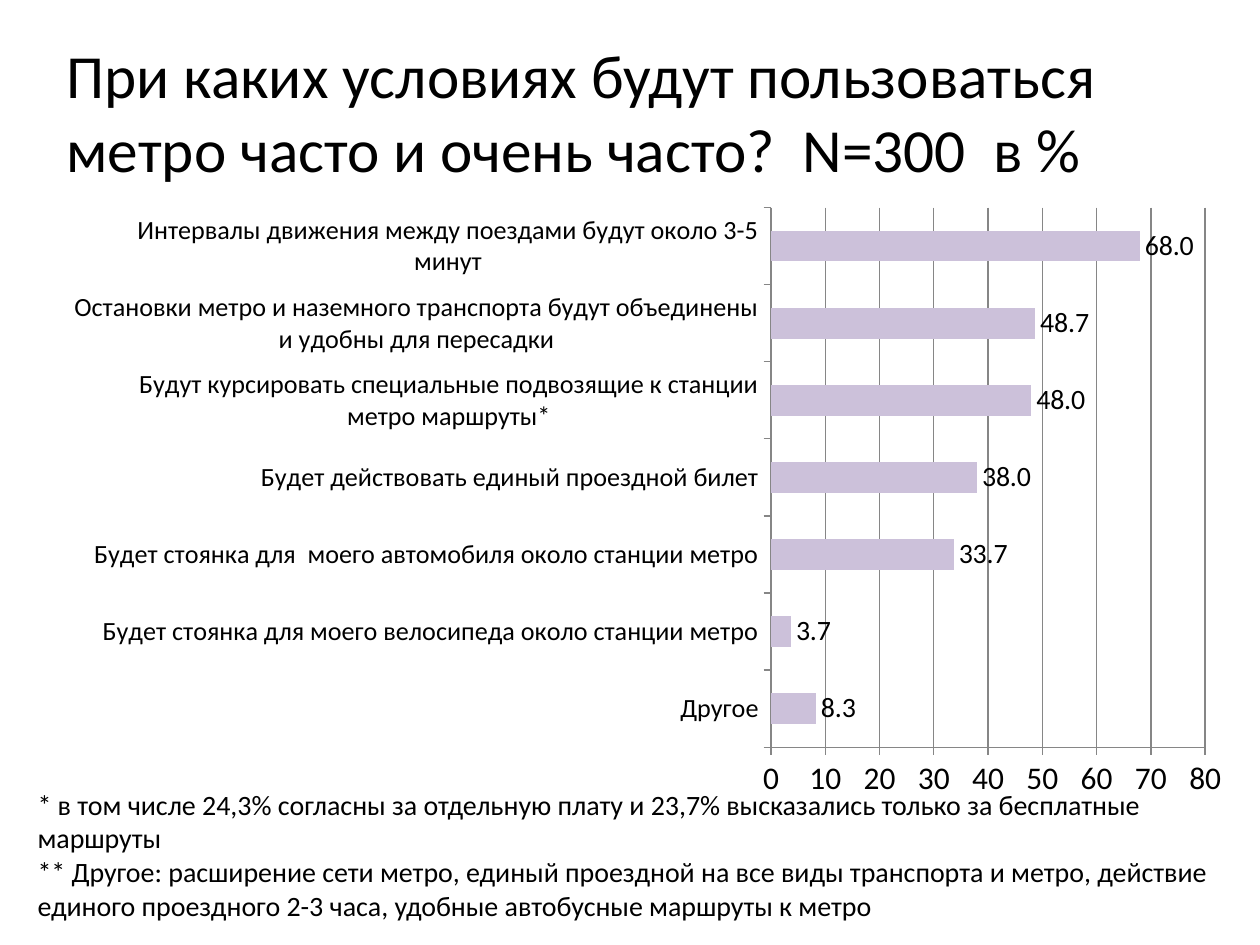
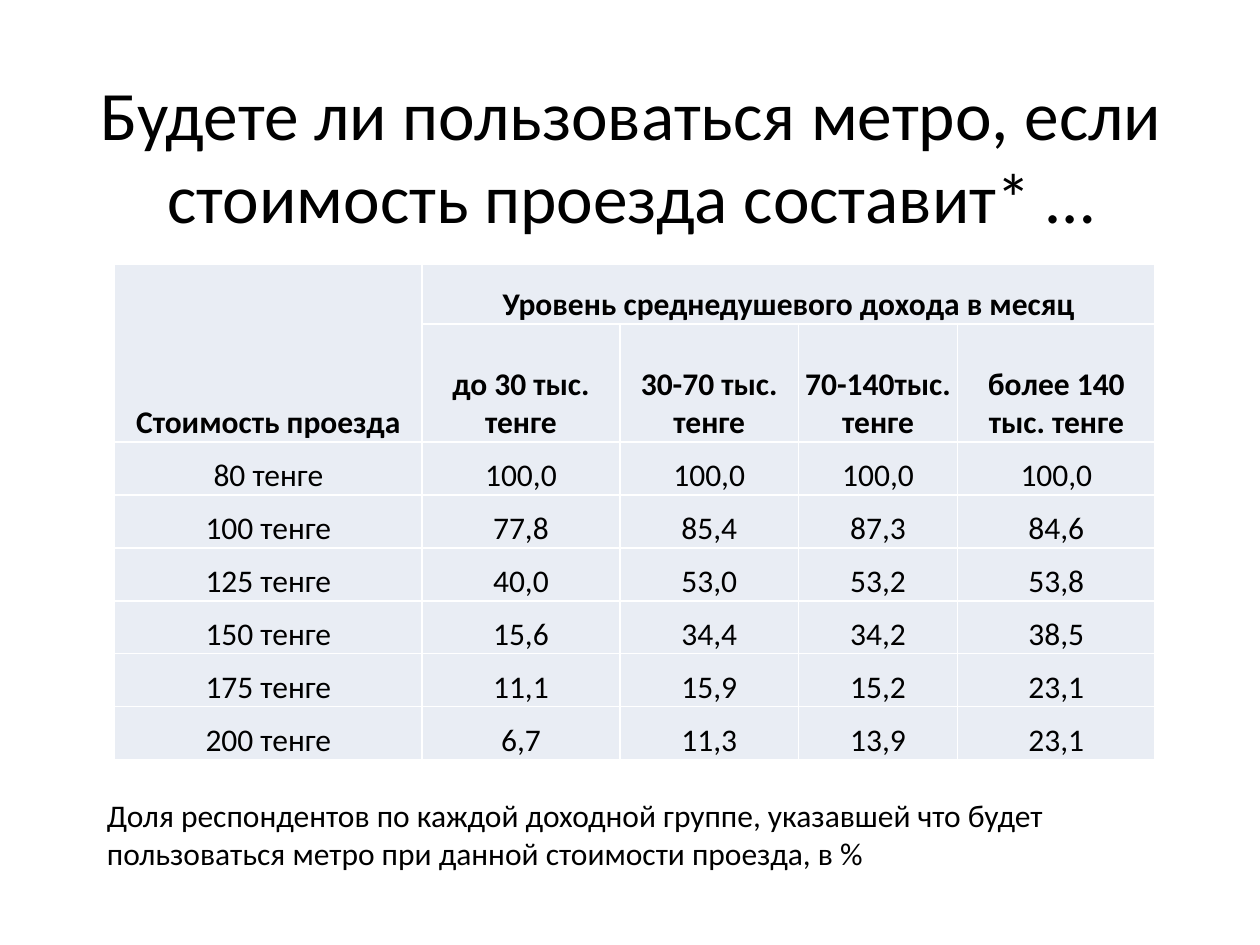
"""Builds two survey slides on metro use: a bar chart and a fare table."""
from lxml import etree
from pptx import Presentation
from pptx import util as u
from pptx.chart import data as cd
from pptx.dml import color as col
from pptx.enum import chart as ch, text as t
from pptx.oxml import ns, parse_xml

BLACK = col.RGBColor(0x00, 0x00, 0x00)
LILAC = col.RGBColor(0xCC, 0xC1, 0xDA)
GRID = col.RGBColor(0x86, 0x86, 0x86)
CELL = col.RGBColor(0xE9, 0xED, 0xF4)
FONT = "Calibri"


def style(font, size, bold=False):
    font.name, font.size, font.bold = FONT, u.Pt(size), bold
    font.color.rgb = BLACK


def write(tf, *paras, size=18, bold=False, align=t.PP_ALIGN.LEFT, anchor=t.MSO_ANCHOR.TOP):
    tf.word_wrap = True
    tf.vertical_anchor = anchor
    for i, line in enumerate(paras):
        p = tf.add_paragraph() if i else tf.paragraphs[0]
        p.alignment = align
        r = p.add_run()
        r.text = line
        style(r.font, size, bold)


prs = Presentation()
prs.slide_width, prs.slide_height = u.Inches(10), u.Inches(7.5)

texts = [
    [((0.43, 0.21, 9, 1.34),
      ["При каких условиях будут пользоваться метро часто и очень часто?  N=300  в %"],
      dict(size=35, anchor=t.MSO_ANCHOR.MIDDLE)),
     ((0.2, 6.2, 9.53, 1.18),
      ["* в том числе 24,3% согласны за отдельную плату и 23,7% высказались только за бесплатные маршруты",
       "** Другое: расширение сети метро, единый проездной на все виды транспорта и метро, "
       "действие единого проездного 2-3 часа, удобные автобусные маршруты к метро"],
      dict(size=16))],
    [((0.51, 0.6, 9, 1.25),
      ["Будете ли пользоваться метро, если стоимость проезда составит* …"],
      dict(size=39.6, align=t.PP_ALIGN.CENTER, anchor=t.MSO_ANCHOR.MIDDLE)),
     ((0.75, 6.27, 8.82, 0.71),
      ["Доля респондентов по каждой доходной группе, указавшей что будет "
       "пользоваться метро при данной стоимости проезда, в %"], {})],
]
slides = []
for boxes in texts:
    s = prs.slides.add_slide(prs.slide_layouts[6])
    slides.append(s)
    for place, paras, fmt in boxes:
        sp = s.shapes.add_textbox(*map(u.Inches, place))
        write(sp.text_frame, *paras, **fmt)

conditions = {
    "Другое": 8.3,
    "Будет стоянка для моего велосипеда около станции метро": 3.7,
    "Будет стоянка для  моего автомобиля около станции метро": 33.7,
    "Будет действовать единый проездной билет": 38,
    "Будут курсировать специальные подвозящие к станции метро маршруты*": 48,
    "Остановки метро и наземного транспорта будут объединены и удобны для пересадки": 48.7,
    "Интервалы движения между поездами будут около 3-5 минут": 68,
}
data = cd.CategoryChartData()
data.categories = list(conditions)
data.add_series("Series 1", list(conditions.values()))
chart = slides[0].shapes.add_chart(
    ch.XL_CHART_TYPE.BAR_CLUSTERED, *map(u.Inches, (0.59, 1.55, 9.29, 4.88)), data).chart
chart.has_legend = chart.has_title = False
style(chart.font, 18)

plot = chart.plots[0]
plot.gap_width = 150
plot.vary_by_categories = False
fill = plot.series[0].format.fill
fill.solid()
fill.fore_color.rgb = LILAC
plot.has_data_labels = True
labels = plot.data_labels
labels.show_value = True
labels.number_format, labels.number_format_is_linked = "0.0", False
labels.position = ch.XL_LABEL_POSITION.OUTSIDE_END
style(labels.font, 16)

cat, val = chart.category_axis, chart.value_axis
for axis, size in ((cat, 15), (val, 18)):
    axis.major_tick_mark = ch.XL_TICK_MARK.OUTSIDE
    axis.format.line.color.rgb = GRID
    style(axis.tick_labels.font, size)
val.minimum_scale, val.maximum_scale, val.major_unit = 0, 80, 10
val.tick_labels.number_format, val.tick_labels.number_format_is_linked = "0", False
val.has_major_gridlines = True
val.major_gridlines.format.line.color.rgb = GRID

area = chart._chartSpace.chart.plotArea
for old in area.findall(ns.qn("c:layout")):
    area.remove(old)
layout = etree.Element(ns.qn("c:layout"))
manual = etree.SubElement(layout, ns.qn("c:manualLayout"))
for tag, value in (("layoutTarget", "inner"), ("xMode", "edge"), ("yMode", "edge"),
                   ("x", "0.594"), ("y", "0.02"), ("w", "0.372"), ("h", "0.878")):
    etree.SubElement(manual, ns.qn("c:" + tag)).set("val", value)
area.insert(0, layout)

rows = [
    ["Стоимость проезда", "Уровень среднедушевого дохода в месяц", "", "", ""],
    ["", "до 30 тыс. тенге", "30-70 тыс. тенге", "70-140тыс. тенге", "более 140 тыс. тенге"],
    ["80 тенге", "100,0", "100,0", "100,0", "100,0"],
    ["100 тенге", "77,8", "85,4", "87,3", "84,6"],
    ["125 тенге", "40,0", "53,0", "53,2", "53,8"],
    ["150 тенге", "15,6", "34,4", "34,2", "38,5"],
    ["175 тенге", "11,1", "15,9", "15,2", "23,1"],
    ["200 тенге", "6,7", "11,3", "13,9", "23,1"],
]
table = slides[1].shapes.add_table(
    len(rows), len(rows[0]), *map(u.Inches, (0.91, 2.1, 8.26, 3.93))).table
for column, width in zip(table.columns, (2.44, 1.57, 1.42, 1.26, 1.57)):
    column.width = u.Inches(width)
for row, height in zip(table.rows, [0.47, 0.94] + [0.42] * 6):
    row.height = u.Inches(height)
table.cell(0, 0).merge(table.cell(1, 0))
table.cell(0, 1).merge(table.cell(0, 4))
for i, row in enumerate(rows):
    for j, value in enumerate(row):
        cell = table.cell(i, j)
        cell.margin_left = cell.margin_right = cell.margin_top = u.Inches(0.01)
        cell.margin_bottom = 0
        cell.vertical_anchor = t.MSO_ANCHOR.BOTTOM
        for side in ("lnL", "lnR", "lnT", "lnB"):
            cell._tc.get_or_add_tcPr().append(parse_xml(
                f'<a:{side} {ns.nsdecls("a")} w="12700"><a:solidFill>'
                f'<a:srgbClr val="FFFFFF"/></a:solidFill></a:{side}>'))
        cell.fill.solid()
        cell.fill.fore_color.rgb = CELL
        if value:
            write(cell.text_frame, value, bold=i < 2, align=t.PP_ALIGN.CENTER,
                  anchor=t.MSO_ANCHOR.BOTTOM)

prs.save("out.pptx")
